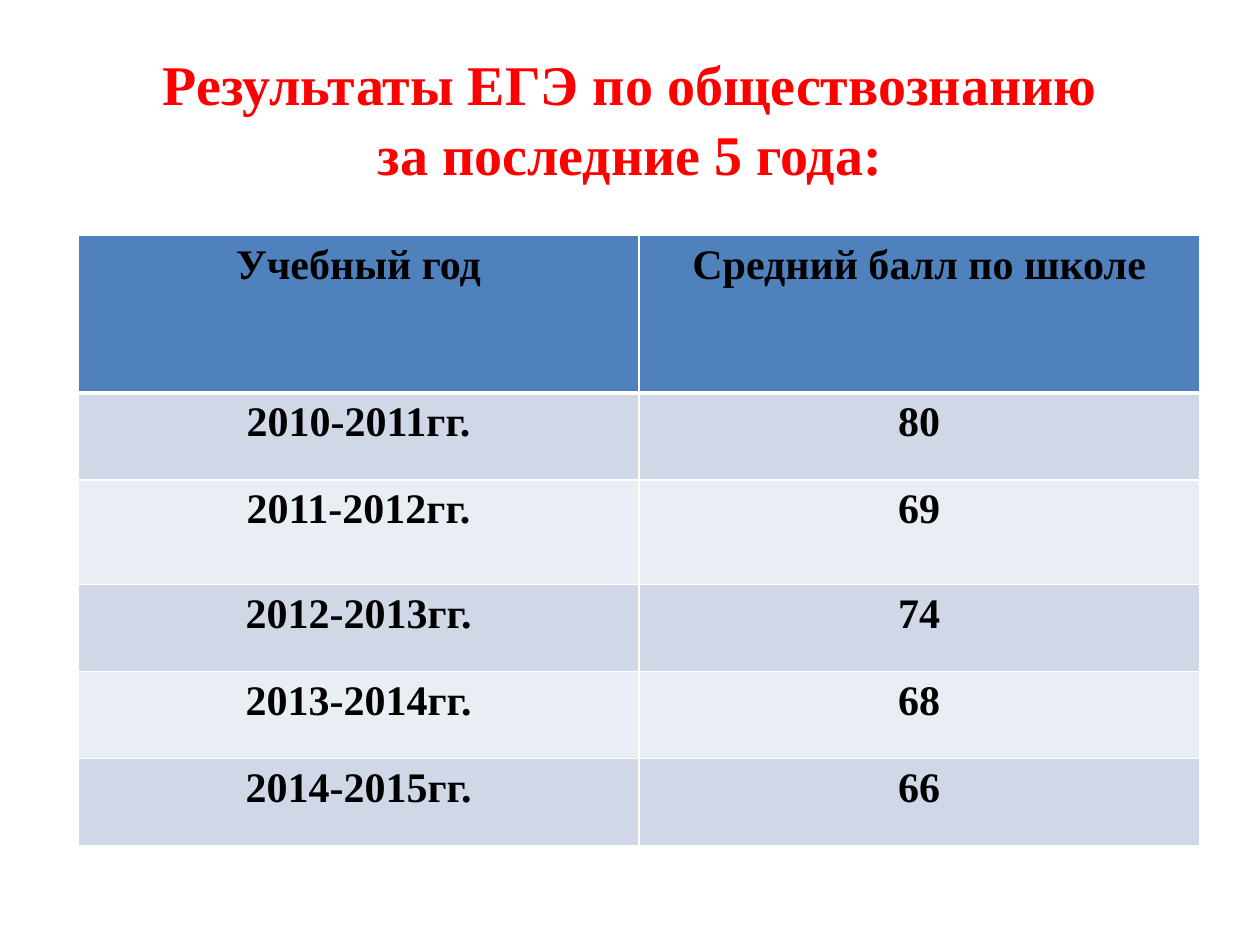
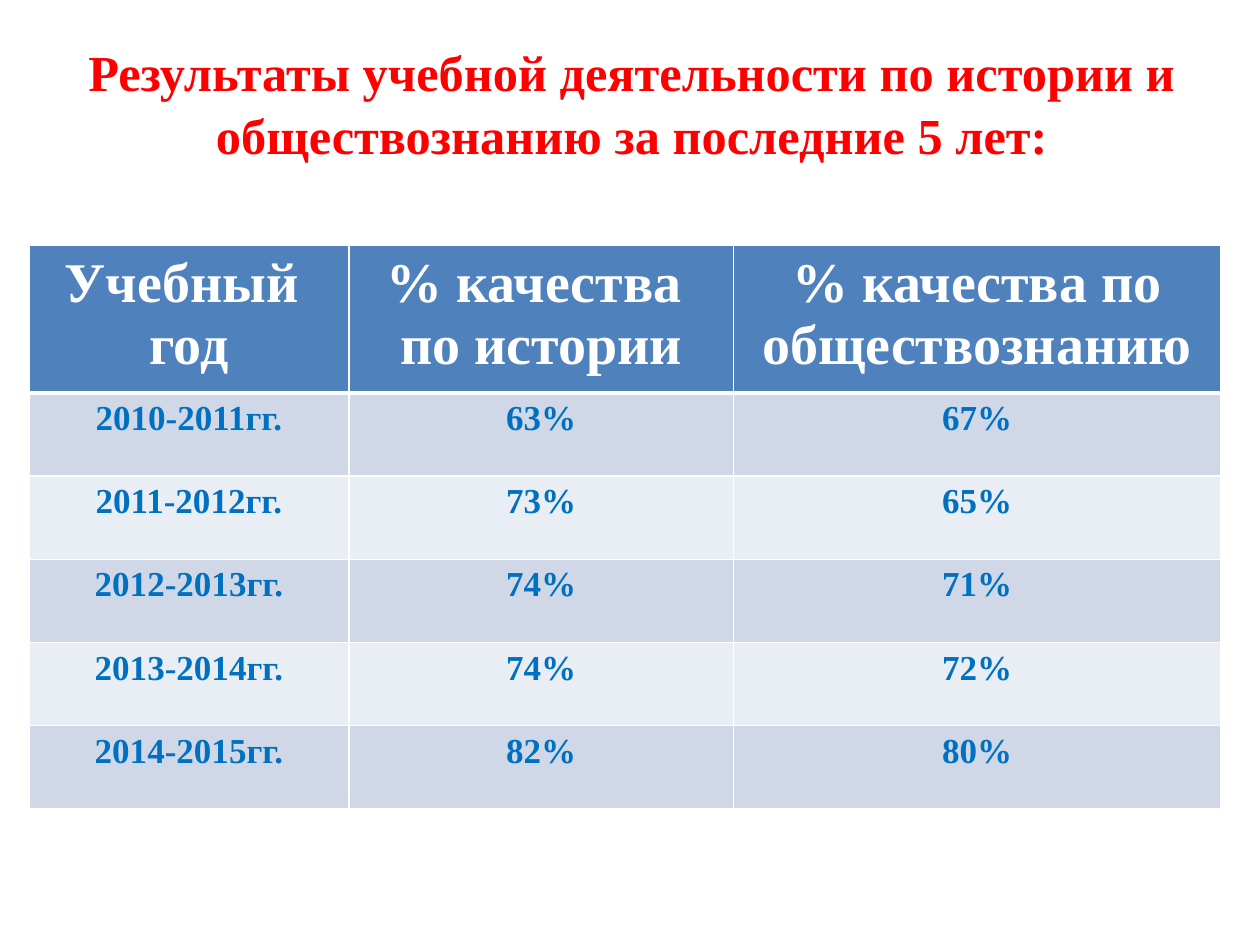
from lxml.etree import SubElement
from pptx import Presentation
from pptx.dml.color import RGBColor
from pptx.enum.text import MSO_ANCHOR, PP_ALIGN
from pptx.oxml.ns import qn
from pptx.util import Pt

PX = 9144
HUES = {"title": "FF0000", "head": "4F81BD", "odd": "D0D8E8", "even": "E9EDF4",
        "line": "FFFFFF", "white": "FFFFFF", "black": "000000", "blue": "0070C0"}
YEARS = ["2010-2011гг.", "2011-2012гг.", "2012-2013гг.", "2013-2014гг.", "2014-2015гг."]

PAGES = [
    {"title": "Результаты ЕГЭ по обществознанию\vза последние 5 года:",
     "box": (50, 30, 900, 125), "size": 32,
     "frame": {"vertical_anchor": MSO_ANCHOR.MIDDLE},
     "spot": (62, 187), "cols": [445, 445], "rows": [125, 69, 83, 69, 69, 69],
     "head": ["Учебный год", "Средний балл по школе"],
     "data": [["80", "69", "74", "68", "66"]],
     "top": (24, "black"), "body": (24, "black")},
    {"title": "Результаты учебной деятельности по истории и обществознанию за последние 5 лет:",
     "box": (50, 30, 903, 134), "size": 28.8,
     "frame": {"vertical_anchor": MSO_ANCHOR.TOP, "margin_top": 0},
     "spot": (23, 195), "cols": [254, 305, 387], "rows": [117] + [66] * 5,
     "head": ["Учебный \nгод", "% качества \nпо истории", "% качества по обществознанию"],
     "data": [["63%", "73%", "74%", "74%", "82%"], ["67%", "65%", "71%", "72%", "80%"]],
     "top": (32, "white"), "body": (20, "blue")},
]


def style(frame, size, hue):
    look = {"name": "Times New Roman", "size": Pt(size), "bold": True}
    for para in frame.paragraphs:
        para.alignment = PP_ALIGN.CENTER
        for run in para.runs:
            for key, value in look.items():
                setattr(run.font, key, value)
            run.font.color.rgb = RGBColor.from_string(HUES[hue])


def edge(cell, row):
    props = cell._tc.get_or_add_tcPr()
    widths = {"lnL": 1, "lnR": 1, "lnT": 3 if row == 1 else 1, "lnB": 3 if row == 0 else 1}
    for tag, width in widths.items():
        line = SubElement(props, qn("a:" + tag), w=str(Pt(width)))
        fill = SubElement(line, qn("a:solidFill"))
        SubElement(fill, qn("a:srgbClr"), val=HUES["line"])


deck = Presentation()
deck.slide_width, deck.slide_height = 1000 * PX, 750 * PX

for page in PAGES:
    slide = deck.slides.add_slide(deck.slide_layouts[5])
    title = slide.shapes.title
    for key, value in zip(("left", "top", "width", "height"), page["box"]):
        setattr(title, key, value * PX)
    frame = title.text_frame
    frame.text = page["title"]
    frame.word_wrap = True
    for key, value in page["frame"].items():
        setattr(frame, key, value)
    style(frame, page["size"], "title")
    for para in frame.paragraphs:
        para.line_spacing = 1.05

    cols, rows = page["cols"], page["rows"]
    left, top = page["spot"]
    table = slide.shapes.add_table(len(rows), len(cols), left * PX, top * PX,
                                   sum(cols) * PX, sum(rows) * PX).table
    for col, width in zip(table.columns, cols):
        col.width = width * PX
    for row, height in zip(table.rows, rows):
        row.height = height * PX

    grid = [page["head"], *zip(YEARS, *page["data"])]
    for r, words in enumerate(grid):
        shade = "head" if r == 0 else "odd" if r % 2 else "even"
        for c, word in enumerate(words):
            cell = table.cell(r, c)
            cell.text = word
            style(cell.text_frame, *page["body" if r else "top"])
            edge(cell, r)
            cell.fill.solid()
            cell.fill.fore_color.rgb = RGBColor.from_string(HUES[shade])

deck.save("out.pptx")
